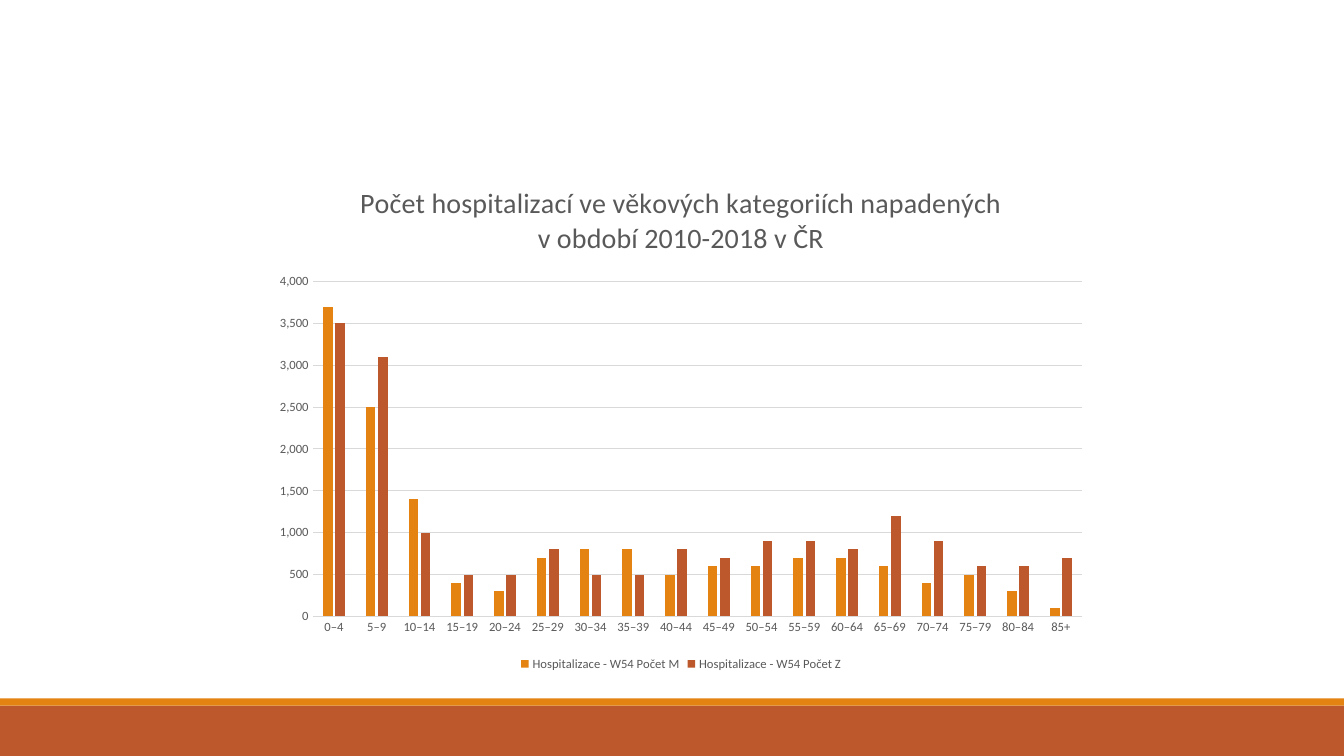
from dataclasses import dataclass

from pptx import Presentation
from pptx.chart.data import CategoryChartData
from pptx.dml.color import RGBColor
from pptx.enum.chart import XL_CHART_TYPE, XL_LEGEND_POSITION, XL_TICK_MARK
from pptx.enum.shapes import MSO_SHAPE
from pptx.util import Inches, Pt

COLUMNS = XL_CHART_TYPE.COLUMN_CLUSTERED
LEGEND_BOTTOM = XL_LEGEND_POSITION.BOTTOM
NO_TICKS = XL_TICK_MARK.NONE
RECTANGLE = MSO_SHAPE.RECTANGLE

SLIDE_WIDTH, SLIDE_HEIGHT = Inches(13.33), Inches(7.5)
FONT_NAME = "Calibri"
ORANGE, RUST, GRAY, LIGHT_GRAY = "E48312", "BD582C", "595959", "D9D9D9"
TITLE = "Počet hospitalizací ve věkových kategoriích napadených v období 2010-2018 v ČR"
AGE_GROUPS = [f"{age}–{age + 4}" for age in range(0, 85, 5)] + ["85+"]


@dataclass(frozen=True)
class Band:
    """Full-width footer band, in inches."""
    top: float
    height: float
    color: str


@dataclass(frozen=True)
class Series:
    name: str
    color: str
    values: tuple[int, ...]


BANDS = (Band(7, 0.5, RUST), Band(6.93, 0.07, ORANGE))
SERIES = (
    Series("Hospitalizace - W54 Počet M", ORANGE,
           (3700, 2500, 1400, 400, 300, 700, 800, 800, 500,
            600, 600, 700, 700, 600, 400, 500, 300, 100)),
    Series("Hospitalizace - W54 Počet Z", RUST,
           (3500, 3100, 1000, 500, 500, 800, 500, 500, 800,
            700, 900, 900, 800, 1200, 900, 600, 600, 700)),
)


def rgb(color: str) -> RGBColor:
    return RGBColor.from_string(color)


def format_font(font, size: float) -> None:
    formats = {"name": FONT_NAME, "size": Pt(size), "bold": False}
    for name, value in formats.items():
        setattr(font, name, value)
    font.color.rgb = rgb(GRAY)


def format_line(line) -> None:
    line.color.rgb = rgb(LIGHT_GRAY)
    line.width = Pt(0.75)


def draw_band(slide, band: Band) -> None:
    shape = slide.shapes.add_shape(
        RECTANGLE, 0, Inches(band.top), SLIDE_WIDTH, Inches(band.height))
    shape.shadow.inherit = False
    shape.fill.solid()
    shape.fill.fore_color.rgb = rgb(band.color)
    shape.line.fill.background()


def format_title(chart) -> None:
    chart.has_title = True
    paragraph = chart.chart_title.text_frame.paragraphs[0]
    run = paragraph.add_run()
    run.text = TITLE
    format_font(run.font, 20)
    chart.chart_title.include_in_layout = False


def format_axes(chart) -> None:
    for axis in (chart.category_axis, chart.value_axis):
        axis.major_tick_mark = axis.minor_tick_mark = NO_TICKS
        format_font(axis.tick_labels.font, 9)
    format_line(chart.category_axis.format.line)
    value_axis = chart.value_axis
    scale = {"minimum_scale": 0, "maximum_scale": 4000, "major_unit": 500}
    for name, value in scale.items():
        setattr(value_axis, name, value)
    value_axis.format.line.fill.background()
    format_line(value_axis.major_gridlines.format.line)
    value_axis.tick_labels.number_format = "#,##0"
    value_axis.tick_labels.number_format_is_linked = False


def draw_chart(slide) -> None:
    data = CategoryChartData()
    data.categories = AGE_GROUPS
    for series in SERIES:
        data.add_series(series.name, series.values)
    chart = slide.shapes.add_chart(
        COLUMNS, Inches(2.61), Inches(1.61), Inches(8.29), Inches(5.09), data).chart
    format_font(chart.font, 10)
    format_title(chart)
    format_axes(chart)
    chart.has_legend = True
    chart.legend.position = LEGEND_BOTTOM
    chart.legend.include_in_layout = False
    format_font(chart.legend.font, 9)
    plot = chart.plots[0]
    plot.gap_width, plot.overlap, plot.vary_by_categories = 219, -27, False
    for series, drawn in zip(SERIES, plot.series):
        drawn.format.fill.solid()
        drawn.format.fill.fore_color.rgb = rgb(series.color)


def main() -> None:
    presentation = Presentation()
    presentation.slide_width, presentation.slide_height = SLIDE_WIDTH, SLIDE_HEIGHT
    slide = presentation.slides.add_slide(presentation.slide_layouts[6])
    for band in BANDS:
        draw_band(slide, band)
    draw_chart(slide)
    presentation.save("out.pptx")


if __name__ == "__main__":
    main()
